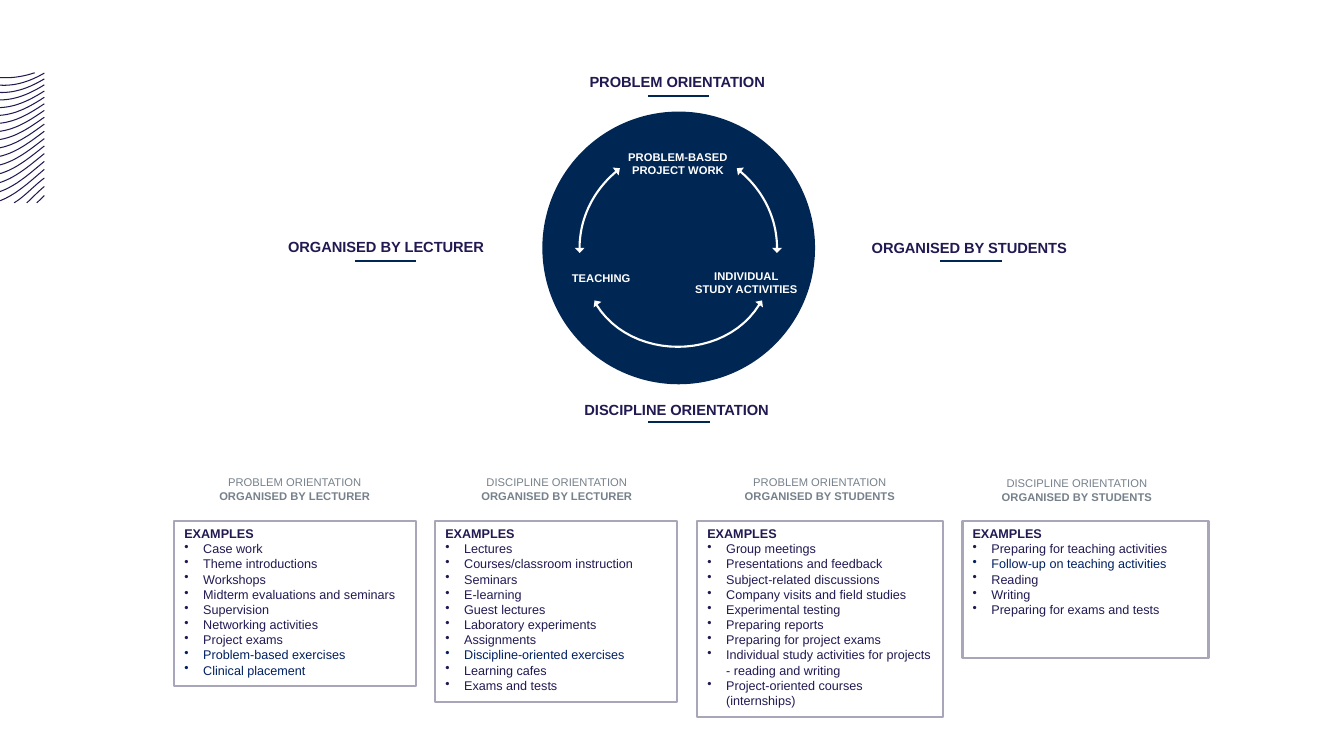
import pptx
import pptx.util
import pptx.dml.color
import pptx.enum.shapes
import pptx.enum.text
import pptx.oxml
import lxml.etree

Pt = pptx.util.Pt
RGBColor = pptx.dml.color.RGBColor
SHAPE = pptx.enum.shapes.MSO_SHAPE
ALIGN = pptx.enum.text.PP_ALIGN

INDIGO = RGBColor(0x21, 0x1A, 0x52)
NAVY = RGBColor(0x00, 0x26, 0x53)
BLUE = RGBColor(0x00, 0x20, 0x60)
GREY = RGBColor(0x76, 0x81, 0x8B)
LILAC = RGBColor(0xA8, 0xA6, 0xB8)
WHITE = RGBColor(0xFF, 0xFF, 0xFF)

deck = pptx.Presentation()
deck.slide_width = Pt(960)
deck.slide_height = Pt(540)
slide = deck.slides.add_slide(deck.slide_layouts[6])


def draw_outline(points, color, width=0, closed=False):
    scaled = [(x * 100, y * 100) for x, y in points]
    builder = slide.shapes.build_freeform(*scaled[0], scale=127)
    builder.add_line_segments(scaled[1:], close=closed)
    outline = builder.convert_to_shape()
    outline.shadow.inherit = False
    if closed:
        outline.fill.solid()
        outline.fill.fore_color.rgb = color
        outline.line.fill.background()
    else:
        outline.fill.background()
        outline.line.color.rgb = color
        outline.line.width = Pt(width)


def add_label(box, lines, size, color, align, wrap=False):
    label = slide.shapes.add_textbox(*[Pt(v) for v in box])
    frame = label.text_frame
    frame.word_wrap = wrap
    frame.auto_size = pptx.enum.text.MSO_AUTO_SIZE.SHAPE_TO_FIT_TEXT
    for number, (text, bold) in enumerate(lines):
        paragraph = frame.add_paragraph() if number else frame.paragraphs[0]
        paragraph.alignment = align
        run = paragraph.add_run()
        run.text = text
        run.font.name = "Arial"
        run.font.size = Pt(size)
        run.font.bold = bold
        run.font.color.rgb = color


waves = [
    [(0, 55.4), (9, 56), (17, 54.5), (24.8, 52)],
    [(10.1, 144.9), (17, 141), (24, 133), (31.7, 127.2)],
    [(19.1, 144.9), (23, 141.5), (27, 137), (31.7, 133.2)],
    [(26.3, 144.9), (28, 143.3), (30, 141.5), (31.7, 139.7)],
]
for k in range(15):
    left = 60.8 + 5.2 * k + 0.05 * k * k
    right = 52.2 + 4.1 * k + 0.058 * k * k
    waves.append([(0, left), (11.5, left + 0.7 - 0.36 * k),
                  (21.6, right + 5.8 + 0.2 * k), (31.7, right)])

for x, y in [(462.8, 68.4), (463.2, 301.7), (671.8, 186.5), (253.5, 186.5)]:
    underline = slide.shapes.add_connector(
        pptx.enum.shapes.MSO_CONNECTOR.STRAIGHT, Pt(x), Pt(y), Pt(x + 44), Pt(y))
    underline.line.color.rgb = NAVY
    underline.line.width = Pt(1.25)
    lxml.etree.SubElement(underline._element.spPr, pptx.oxml.ns.qn("a:effectLst"))

circle = slide.shapes.add_shape(SHAPE.OVAL, Pt(387.4), Pt(79.7), Pt(194.8), Pt(194.8))
circle.shadow.inherit = False
circle.fill.solid()
circle.fill.fore_color.rgb = NAVY
circle.line.fill.background()

right_arc = [(528.5, 122.2), (544.5, 135.4), (555.1, 155), (555.1, 177.5)]
bottom_arc = [(426, 217.6), (451, 257.8), (517.5, 257.8), (542.4, 217.6)]
right_heads = [
    [(531.4, 119.7), (527.2, 125.3), (526.3, 120.2)],
    [(558.5, 177.1), (551.6, 177.1), (555, 180.7)],
    [(539.5, 215.6), (545, 219.6), (544.4, 214.6)],
]
MIRROR = 969.1
left_arc = [(MIRROR - x, y) for x, y in right_arc]
curves = [(wave, INDIGO, 0.75) for wave in waves]
curves += [(arc, WHITE, 1.5) for arc in (right_arc, left_arc, bottom_arc)]
for (a, b, c, d), color, width in curves:
    points = []
    for step in range(25):
        t = step / 24
        points.append([(1 - t) ** 3 * p + 3 * t * (1 - t) ** 2 * q
                       + 3 * t * t * (1 - t) * r + t ** 3 * s
                       for p, q, r, s in zip(a, b, c, d)])
    draw_outline(points, color, width)
for head in right_heads:
    draw_outline(head, WHITE, closed=True)
    draw_outline([(MIRROR - x, y) for x, y in head], WHITE, closed=True)

for box, lines in [
    ((441.4, 103.7, 85.7, 26.6), ["PROBLEM-BASED", "PROJECT WORK"]),
    ((401, 190.1, 56.9, 17.3), ["TEACHING"]),
    ((488.9, 188.6, 88.6, 26.6), ["INDIVIDUAL", "STUDY ACTIVITIES"]),
]:
    add_label(box, [(line, True) for line in lines], 8, WHITE, ALIGN.CENTER)

for x, y, width, text in [
    (615.6, 167, 156.2, "ORGANISED BY STUDENTS"),
    (198.7, 166.3, 157, "ORGANISED BY LECTURER"),
    (410.4, 283, 149.8, "DISCIPLINE ORIENTATION"),
    (414, 48.2, 143.3, "PROBLEM ORIENTATION"),
]:
    add_label((x, y, width, 20.2), [(text, True)], 10.5, INDIGO, ALIGN.LEFT)

columns = [
    (133.9, 336.2, "PROBLEM", "LECTURER", (124.6, 172.8, 118.1), 1.5,
     ["Case work", "Theme introductions", "Workshops",
      "Midterm evaluations and seminars", "Supervision",
      "Networking activities", "Project exams", "Problem-based exercises",
      "Clinical placement"]),
    (321.1, 336.2, "DISCIPLINE", "LECTURER", (311, 172.8, 129.6), 1.5,
     ["Lectures", "Courses/classroom instruction", "Seminars", "E-learning",
      "Guest lectures", "Laboratory experiments", "Assignments",
      "Discipline-oriented exercises", "Learning cafes", "Exams and tests"]),
    (509, 336.2, "PROBLEM", "STUDENTS", (498.2, 175.7, 139.7), 1.5,
     ["Group meetings", "Presentations and feedback",
      "Subject-related discussions", "Company visits and field studies",
      "Experimental testing", "Preparing reports",
      "Preparing for project exams",
      "Individual study activities for projects\n- reading and writing",
      "Project-oriented courses (internships)"]),
    (692.6, 337, "DISCIPLINE", "STUDENTS", (687.6, 175.7, 97.9), 1.63,
     ["Preparing for teaching activities", "Follow-up on teaching activities",
      "Reading", "Writing", "Preparing for exams and tests"]),
]
blue_items = {"Problem-based exercises", "Clinical placement",
              "Discipline-oriented exercises", "Follow-up on teaching activities"}

for x, y, orientation, organiser, (left, width, height), border, examples in columns:
    add_label((x, y, 153.4, 26.6),
              [(orientation + " ORIENTATION", False),
               ("ORGANISED BY " + organiser, True)],
              8, GREY, ALIGN.CENTER, wrap=True)
    panel = slide.shapes.add_shape(SHAPE.RECTANGLE, Pt(left), Pt(372.2),
                                   Pt(width), Pt(height))
    panel.shadow.inherit = False
    panel.fill.background()
    panel.line.color.rgb = LILAC
    panel.line.width = Pt(border)
    frame = panel.text_frame
    frame.word_wrap = True
    frame.vertical_anchor = pptx.enum.text.MSO_ANCHOR.TOP
    for number, item in enumerate(["EXAMPLES"] + examples):
        paragraph = frame.add_paragraph() if number else frame.paragraphs[0]
        paragraph.alignment = ALIGN.LEFT
        if number:
            properties = paragraph._p.get_or_add_pPr()
            properties.set("marL", str(Pt(13.5)))
            properties.set("indent", str(-Pt(13.5)))
            bullet = lxml.etree.SubElement(properties, pptx.oxml.ns.qn("a:buChar"))
            bullet.set("char", "•")
        for row, text in enumerate(item.split("\n")):
            if row:
                paragraph.add_line_break()
            run = paragraph.add_run()
            run.text = text
            run.font.name = "Arial"
            run.font.size = Pt(9)
            run.font.bold = number == 0
            run.font.color.rgb = BLUE if item in blue_items else INDIGO

deck.save("out.pptx")
